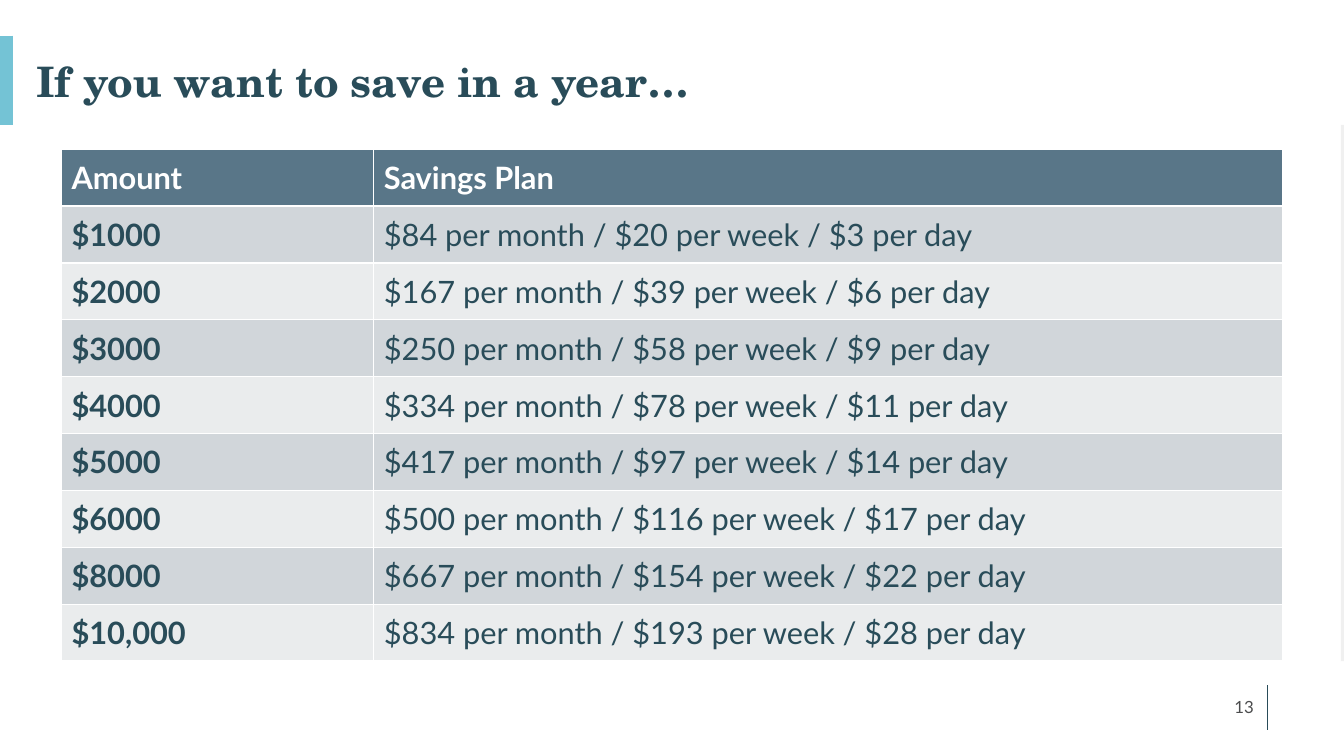
"""Build the yearly savings plan slide."""
from typing import NamedTuple

from pptx import Presentation
from pptx.dml.color import RGBColor
from pptx.enum.shapes import MSO_CONNECTOR as Line, MSO_SHAPE as Shape
from pptx.enum.text import MSO_ANCHOR as Anchor, PP_ALIGN as Align
from pptx.oxml.ns import qn
from pptx.slide import Slide
from pptx.text.text import TextFrame
from pptx.util import Cm, Pt
from lxml.etree import SubElement

TEAL = RGBColor(0x29, 0x4C, 0x59)
AQUA = RGBColor(0x74, 0xC3, 0xD5)
SLATE = RGBColor(0x59, 0x76, 0x88)
BAND_DARK = RGBColor(0xD1, 0xD6, 0xDA)
BAND_LIGHT = RGBColor(0xEA, 0xEC, 0xED)
EDGE = RGBColor(0xF0, 0xF0, 0xF0)
GREY = RGBColor(0x4B, 0x4C, 0x4D)
WHITE = RGBColor(0xFF, 0xFF, 0xFF)


class Style(NamedTuple):
    font: str
    size: float
    color: RGBColor
    bold: bool = False


class Rule(NamedTuple):
    x: float
    top: float
    bottom: float
    color: RGBColor
    width: float


class Label(NamedTuple):
    text: str
    left: float
    top: float
    width: float
    height: float
    style: Style
    anchor: Anchor
    align: Align
    spacing: float


class Plan(NamedTuple):
    amount: str
    month: int
    week: int
    day: int


RULES = [
    Rule(0.15, 0.9, 3.15, AQUA, 10),
    Rule(31.95, 17.27, 18.39, TEAL, 0.75),
]
LABELS = [
    Label("13", 24.23, 17.3, 7.62, 1.02, Style("Lato", 12, GREY),
          Anchor.MIDDLE, Align.RIGHT, 1),
    Label("If you want to save in a year…", 0.66, 0.89, 32.44, 1.93,
          Style("TeX Gyre Schola", 30, TEAL, True), Anchor.BOTTOM, Align.LEFT, 0.9),
]
HEADERS = ("Amount", "Savings Plan")
PLANS = [
    Plan("$1000", 84, 20, 3),
    Plan("$2000", 167, 39, 6),
    Plan("$3000", 250, 58, 9),
    Plan("$4000", 334, 78, 11),
    Plan("$5000", 417, 97, 14),
    Plan("$6000", 500, 116, 17),
    Plan("$8000", 667, 154, 22),
    Plan("$10,000", 834, 193, 28),
]
COLUMN_WIDTHS = (7.87, 22.91)


def write(tf: TextFrame, text: str, style: Style) -> None:
    r = tf.paragraphs[0].add_run()
    r.text = text
    r.font.name, r.font.size, r.font.bold = style.font, Pt(style.size), style.bold
    r.font.color.rgb = style.color


def draw_rule(s: Slide, rule: Rule) -> None:
    line = s.shapes.add_connector(
        Line.STRAIGHT, Cm(rule.x), Cm(rule.top), Cm(rule.x), Cm(rule.bottom))
    line.line.color.rgb = rule.color
    line.line.width = Pt(rule.width)
    SubElement(line._element.spPr, qn("a:effectLst"))


def draw_edge(s: Slide) -> None:
    sp = s.shapes.add_shape(Shape.RECTANGLE, Cm(33.79), Cm(3.15), Cm(0.08), Cm(13.51))
    sp.shadow.inherit = False
    sp.fill.solid()
    sp.fill.fore_color.rgb = EDGE
    sp.line.fill.background()


def draw_label(s: Slide, label: Label) -> None:
    box = s.shapes.add_textbox(
        Cm(label.left), Cm(label.top), Cm(label.width), Cm(label.height))
    tf = box.text_frame
    tf.word_wrap = True
    tf.vertical_anchor = label.anchor
    p = tf.paragraphs[0]
    p.alignment, p.line_spacing = label.align, label.spacing
    write(tf, label.text, label.style)


def draw_table(s: Slide) -> None:
    rows = [HEADERS] + [
        (plan.amount,
         f"${plan.month} per month / ${plan.week} per week / ${plan.day} per day")
        for plan in PLANS
    ]
    table = s.shapes.add_table(len(rows), len(HEADERS), Cm(1.55), Cm(3.76),
                               Cm(sum(COLUMN_WIDTHS)), Cm(12.9)).table
    table.horz_banding = False
    for column, width in zip(table.columns, COLUMN_WIDTHS):
        column.width = Cm(width)
    for i, row in enumerate(rows):
        header = i == 0
        fill = SLATE if header else BAND_DARK if i % 2 else BAND_LIGHT
        for j, text in enumerate(row):
            cell = table.cell(i, j)
            cell.fill.solid()
            cell.fill.fore_color.rgb = fill
            cell.vertical_anchor = Anchor.MIDDLE
            color = WHITE if header else TEAL
            write(cell.text_frame, text, Style("Lato", 22, color, header or j == 0))


def main() -> None:
    prs = Presentation()
    prs.slide_width, prs.slide_height = Cm(33.87), Cm(19.05)
    s = prs.slides.add_slide(prs.slide_layouts[6])
    draw_edge(s)
    for rule in RULES:
        draw_rule(s, rule)
    for label in LABELS:
        draw_label(s, label)
    draw_table(s)
    prs.save("out.pptx")


if __name__ == "__main__":
    main()
